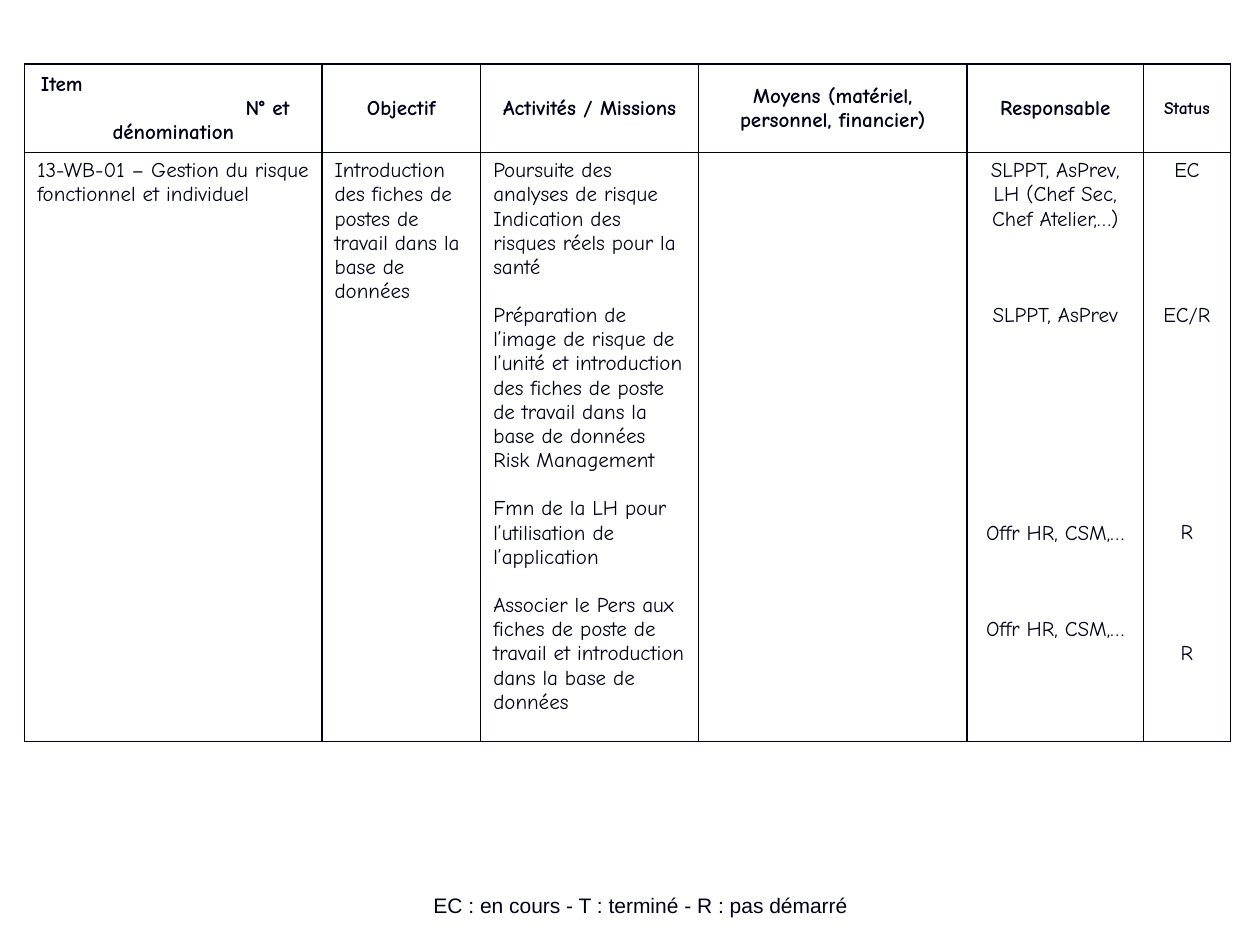
from dataclasses import dataclass

import pptx
import pptx.dml.color
import pptx.enum.text
import pptx.oxml
import pptx.oxml.ns
import pptx.util
from pptx.table import _Cell
from pptx.text.text import _Paragraph

Pt = pptx.util.Pt
LEFT = pptx.enum.text.PP_ALIGN.LEFT
CENTER = pptx.enum.text.PP_ALIGN.CENTER
MIDDLE = pptx.enum.text.MSO_ANCHOR.MIDDLE
TOP = pptx.enum.text.MSO_ANCHOR.TOP

COLORS = {"ink": "000018"}
TABLE_FONT = "Comic Neue"
LINE_HEIGHT = 13.8
ROW_HEIGHTS = (48.6, 324.6)


@dataclass
class Entry:
    text: str
    gap_lines: int = 0
    indent: float = 0
    alignment: pptx.enum.text.PP_ALIGN = CENTER
    size: float = 12


@dataclass
class Column:
    width: float
    heading: list[Entry]
    body: list[Entry]


COLUMNS = [
    Column(
        169.92,
        [
            Entry("Item", indent=2, alignment=LEFT),
            Entry("N° et", indent=119, alignment=LEFT),
            Entry("dénomination"),
        ],
        [Entry("13-WB-01 – Gestion du risque fonctionnel et individuel", alignment=LEFT)],
    ),
    Column(
        90.72,
        [Entry("Objectif")],
        [Entry("Introduction des fiches de postes de travail dans la base de données",
               alignment=LEFT)],
    ),
    Column(
        124.56,
        [Entry("Activités / Missions")],
        [
            Entry("Poursuite des analyses de risque Indication des risques réels "
                  "pour la santé", alignment=LEFT),
            Entry("Préparation de l’image de risque de l’unité et introduction des "
                  "fiches de poste de travail dans la base de données Risk Management",
                  gap_lines=1, alignment=LEFT),
            Entry("Fmn de la LH pour l’utilisation de l’application",
                  gap_lines=1, alignment=LEFT),
            Entry("Associer le Pers aux fiches de poste de travail et introduction "
                  "dans la base de données", gap_lines=1, alignment=LEFT),
        ],
    ),
    Column(153.36, [Entry("Moyens (matériel, personnel, financier)")], []),
    Column(
        100.8,
        [Entry("Responsable")],
        [
            Entry("SLPPT, AsPrev, LH (Chef Sec, Chef Atelier,…)"),
            Entry("SLPPT, AsPrev", gap_lines=3),
            Entry("Offr HR, CSM,…", gap_lines=8),
            Entry("Offr HR, CSM,…", gap_lines=3),
        ],
    ),
    Column(
        49.68,
        [Entry("Status", size=10)],
        [
            Entry("EC"),
            Entry("EC/R", gap_lines=5),
            Entry("R", gap_lines=8),
            Entry("R", gap_lines=4),
        ],
    ),
]


def format_runs(paragraph: _Paragraph, name: str, size: float, bold: bool) -> None:
    for run in paragraph.runs:
        run.font.name = name
        run.font.size = Pt(size)
        run.font.bold = bold
        run.font.color.rgb = pptx.dml.color.RGBColor.from_string(COLORS["ink"])


def add_borders(cell: _Cell) -> None:
    properties = cell._tc.get_or_add_tcPr()
    for position, side in enumerate(("lnL", "lnR", "lnT", "lnB")):
        border = pptx.oxml.parse_xml(
            f'<a:{side} {pptx.oxml.ns.nsdecls("a")} w="{Pt(1)}"><a:solidFill>'
            f'<a:srgbClr val="{COLORS["ink"]}"/></a:solidFill></a:{side}>'
        )
        properties.insert(position, border)


def fill_cell(cell: _Cell, entries: list[Entry], is_heading: bool) -> None:
    cell.fill.background()
    add_borders(cell)
    cell.vertical_anchor = MIDDLE if is_heading else TOP
    cell.margin_left = cell.margin_right = Pt(7.2)
    cell.margin_top = cell.margin_bottom = Pt(3.6)
    text_frame = cell.text_frame
    for index, entry in enumerate(entries):
        paragraph = text_frame.add_paragraph() if index else text_frame.paragraphs[0]
        paragraph.text = entry.text
        paragraph.alignment = entry.alignment
        if entry.gap_lines:
            paragraph.space_before = Pt(entry.gap_lines * LINE_HEIGHT)
        if entry.indent:
            paragraph._p.get_or_add_pPr().set("marL", str(Pt(entry.indent)))
        format_runs(paragraph, TABLE_FONT, entry.size, is_heading)


def add_action_table(slide: pptx.slide.Slide) -> None:
    total_width = sum(column.width for column in COLUMNS)
    table = slide.shapes.add_table(
        len(ROW_HEIGHTS), len(COLUMNS),
        Pt(14.1), Pt(36.7), Pt(total_width), Pt(sum(ROW_HEIGHTS)),
    ).table
    table.first_row = False
    table.horz_banding = False
    for row, height in zip(table.rows, ROW_HEIGHTS):
        row.height = Pt(height)
    for index, column in enumerate(COLUMNS):
        table.columns[index].width = Pt(column.width)
        fill_cell(table.cell(0, index), column.heading, True)
        fill_cell(table.cell(1, index), column.body, False)


def add_legend(slide: pptx.slide.Slide) -> None:
    text_box = slide.shapes.add_textbox(Pt(167.8), Pt(491.8), Pt(396.7), Pt(36))
    text_frame = text_box.text_frame
    text_frame.word_wrap = True
    text_frame.vertical_anchor = pptx.enum.text.MSO_ANCHOR.BOTTOM
    text_frame.text = "EC : en cours - T : terminé - R : pas démarré"
    paragraph = text_frame.paragraphs[0]
    paragraph.alignment = CENTER
    format_runs(paragraph, "Arial", 12, False)


def main() -> None:
    presentation = pptx.Presentation()
    presentation.slide_width = Pt(720)
    presentation.slide_height = Pt(540)
    slide = presentation.slides.add_slide(presentation.slide_layouts[6])
    add_legend(slide)
    add_action_table(slide)
    presentation.save("out.pptx")


if __name__ == "__main__":
    main()
